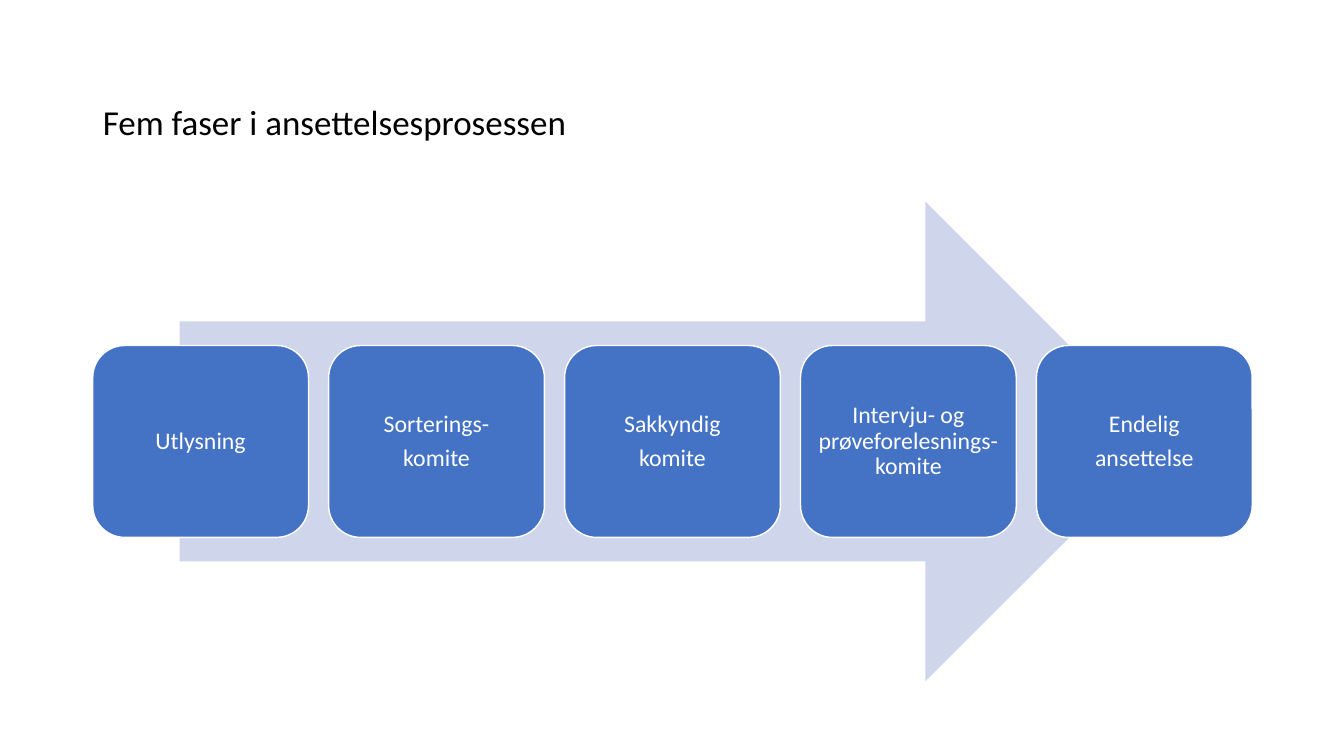
from pptx import Presentation
from pptx.dml.color import RGBColor
from pptx.enum.shapes import MSO_SHAPE
from pptx.enum.text import MSO_ANCHOR, PP_ALIGN
from pptx.util import Inches, Pt

TITLE = "Fem faser i ansettelsesprosessen"
PHASES = [
    ["Utlysning"],
    ["Sorterings-", "komite"],
    ["Sakkyndig", "komite"],
    ["Intervju- og prøveforelesnings-komite"],
    ["Endelig", "ansettelse"],
]
COLORS = {"title": "000000", "arrow": "CFD5EA", "box": "4472C4", "light": "FFFFFF"}

# Layout in inches
WIDTH, HEIGHT = 13.33, 7.5
LEFT, CONTENT_WIDTH = 0.92, 11.5
TITLE_TOP, TITLE_HEIGHT = 0.61, 1.24
ARROW_TOP, ARROW_HEIGHT = 2, 4.76
ARROW_SHARE = 0.85
GAP = 0.2
BOX_WIDTH = (CONTENT_WIDTH - GAP * (len(PHASES) - 1)) / len(PHASES)
BOX_HEIGHT = ARROW_HEIGHT * 0.4


def color(name):
    return RGBColor.from_string(COLORS[name])


def apply(target, values):
    for name, value in values.items():
        setattr(target, name, value)


def place(left, top, width, height):
    return [Inches(value) for value in (left, top, width, height)]


def write(shape, lines, size, text_color, align, margin, space=0):
    frame = shape.text_frame
    frame.text = "\n".join(lines)
    apply(frame, {"word_wrap": True, "vertical_anchor": MSO_ANCHOR.MIDDLE})
    apply(frame, {f"margin_{side}": Inches(margin)
                  for side in ("left", "right", "top", "bottom")})
    for para in frame.paragraphs:
        apply(para, {"alignment": align, "line_spacing": 0.9, "space_after": Pt(space)})
        apply(para.font, {"size": Pt(size), "name": "Calibri"})
        para.font.color.rgb = color(text_color)


def add_filled(page, kind, area, fill):
    shape = page.shapes.add_shape(kind, *place(*area))
    shape.shadow.inherit = False
    shape.fill.solid()
    shape.fill.fore_color.rgb = color(fill)
    return shape


def main():
    deck = Presentation()
    apply(deck, {"slide_width": Inches(WIDTH), "slide_height": Inches(HEIGHT)})
    page = deck.slides.add_slide(deck.slide_layouts[5])

    # Title
    title = page.shapes.title
    area = place(LEFT, TITLE_TOP, CONTENT_WIDTH, TITLE_HEIGHT)
    apply(title, dict(zip(("left", "top", "width", "height"), area)))
    write(title, [TITLE], 25, "title", PP_ALIGN.LEFT, 0.1)

    # Arrow behind the phases
    arrow_width = CONTENT_WIDTH * ARROW_SHARE
    arrow_left = LEFT + (CONTENT_WIDTH - arrow_width) / 2
    arrow = add_filled(page, MSO_SHAPE.RIGHT_ARROW,
                       (arrow_left, ARROW_TOP, arrow_width, ARROW_HEIGHT), "arrow")
    arrow.line.fill.background()

    # Phase boxes, centred on the arrow
    box_top = ARROW_TOP + (ARROW_HEIGHT - BOX_HEIGHT) / 2
    for index, lines in enumerate(PHASES):
        box_left = LEFT + index * (BOX_WIDTH + GAP)
        box = add_filled(page, MSO_SHAPE.ROUNDED_RECTANGLE,
                         (box_left, box_top, BOX_WIDTH, BOX_HEIGHT), "box")
        box.line.color.rgb = color("light")
        box.line.width = Pt(1)
        write(box, lines, 17, "light", PP_ALIGN.CENTER, 0.06, space=6)

    deck.save("out.pptx")


if __name__ == "__main__":
    main()
